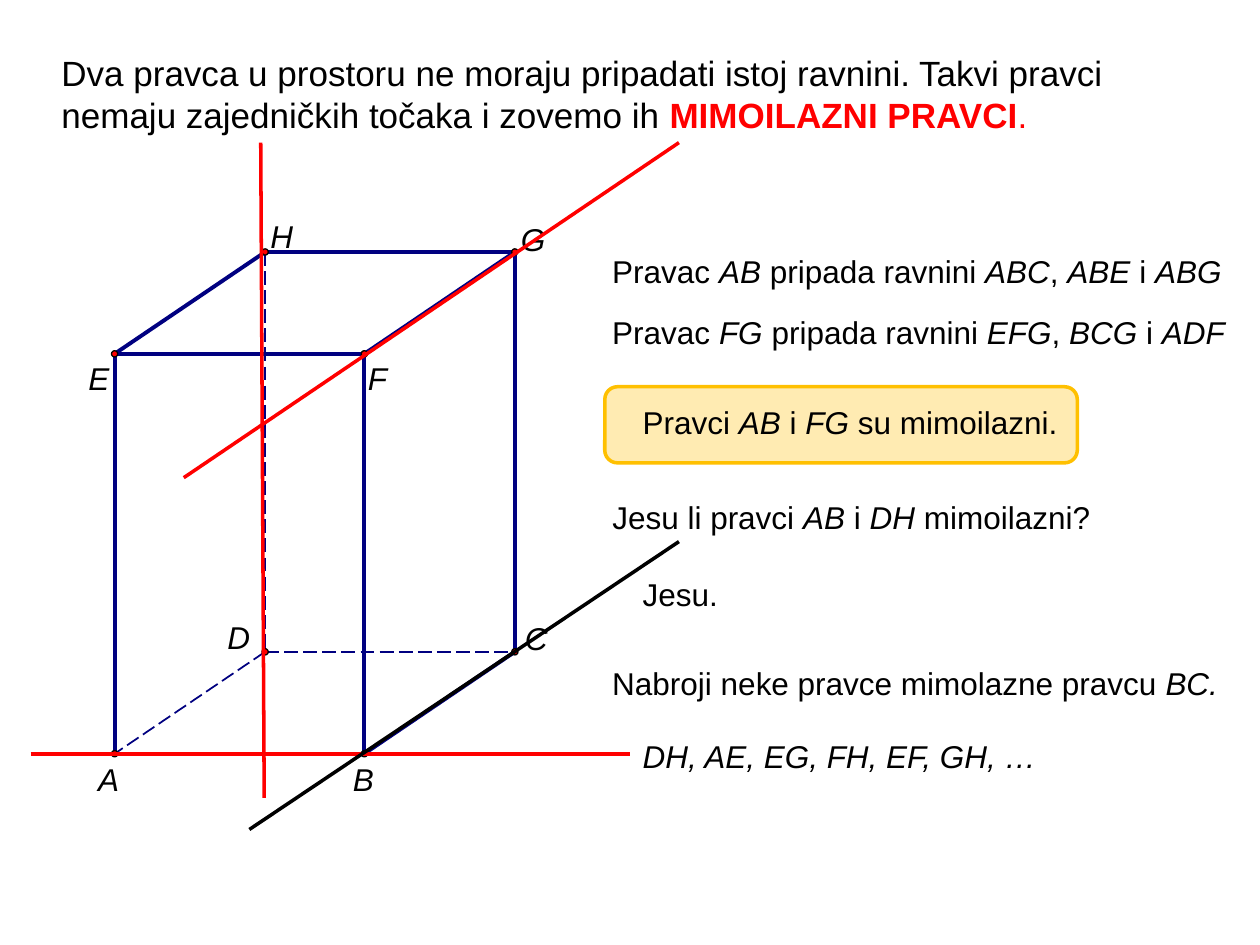
from pptx import Presentation
from pptx.dml.color import RGBColor
from pptx.enum.dml import MSO_LINE
from pptx.enum.shapes import MSO_CONNECTOR as LINK, MSO_SHAPE as SHAPE
from pptx.enum.text import MSO_AUTO_SIZE as FIT
from pptx.oxml.ns import qn
from pptx.util import Pt
from lxml.etree import SubElement

BLACK = RGBColor(0, 0, 0)
RED = RGBColor(255, 0, 0)
NAVY = RGBColor(0, 0, 128)
GOLD = RGBColor(255, 192, 0)

EDGES = ["AB", "AE", "EF", "FB", "CB", "GF", "GC", "HG", "HE"]
HIDDEN = ["DA", "DC", "HD"]
LABELS = {
    "A": (-9.5, 3.5), "B": (-6.5, 3.5), "C": (5.7, -18.7), "D": (-21.5, -19.3),
    "E": (-15, 3), "F": (2, 3), "G": (3.5, -18), "H": (3, -20),
}
LINES = [
    (17.5, 431, 360, 431, RED),
    (105, 273, 388, 81.5, RED),
    (149, 81.5, 151, 456, RED),
    (142.5, 474, 388, 309.5, BLACK),
]
NOTES = [
    (0, 0, 377, "Pravac |AB| pripada ravnini |ABC|, |ABE |i |ABG"),
    (0, 35, 377, "Pravac |FG| pripada ravnini |EFG|, |BCG| i |ADF"),
    (17.3, 86.5, 255, "Pravci |AB |i |FG| su mimoilazni."),
    (0, 140.5, 300, "Jesu li pravci |AB| i |DH| mimoilazni?"),
    (17.3, 184.5, 58, "Jesu."),
    (0, 235.5, 377, "Nabroji neke pravce mimolazne pravcu |BC."),
    (17.3, 277.3, 284, "|DH, AE, EG, FH, EF, GH, …"),
]


def add_line(shapes, start, end, color, width, dash=None):
    line = shapes.add_connector(LINK.STRAIGHT, *map(Pt, (*start, *end)))
    line.line.color.rgb = color
    line.line.width = Pt(width)
    if dash:
        line.line.dash_style = dash
    SubElement(line._element.spPr, qn("a:effectLst"))


def add_text(shapes, box, parts, size, wrap=True, inset=True):
    frame = shapes.add_textbox(*map(Pt, box)).text_frame
    frame.word_wrap = wrap
    frame.auto_size = FIT.SHAPE_TO_FIT_TEXT
    if not inset:
        frame.margin_left = frame.margin_right = 0
        frame.margin_top = frame.margin_bottom = 0
    runs = []
    for part in parts:
        run = frame.paragraphs[0].add_run()
        run.text = part
        run.font.name = "Arial"
        run.font.size = Pt(size)
        run.font.color.rgb = BLACK
        runs.append(run)
    return runs


def add_title(shapes, box):
    lead = ("Dva pravca u prostoru ne moraju pripadati istoj ravnini. "
            "Takvi pravci nemaju zajedničkih točaka i zovemo ih ")
    runs = add_text(shapes, box, [lead, "MIMOILAZNI PRAVCI", "."], 20)
    for run in runs[1:]:
        run.font.color.rgb = RED
    runs[1].font.bold = True


def add_prism(shapes, left, top, width, height, shift, rise):
    group = shapes.add_group_shape().shapes
    base = {
        "E": (left, top + rise), "F": (left + width, top + rise),
        "G": (left + width + shift, top), "H": (left + shift, top),
    }
    spots = dict(base)
    for low, high in zip("ABCD", "EFGH"):
        spots[low] = (base[high][0], base[high][1] + height)
    for a, b in EDGES:
        add_line(group, spots[a], spots[b], NAVY, 2.25)
    for a, b in HIDDEN:
        add_line(group, spots[a], spots[b], NAVY, 1, MSO_LINE.LONG_DASH)
    for name, (x, y) in spots.items():
        dot = group.add_shape(SHAPE.OVAL, Pt(x - 1.8), Pt(y - 1.8), Pt(3.6), Pt(3.6))
        dot.shadow.inherit = False
        dot.fill.solid()
        dot.fill.fore_color.rgb = RED
        dot.line.color.rgb = BLACK
        dot.line.width = Pt(0)
        dx, dy = LABELS[name]
        box = (x + dx, y + dy, 13, 21.6)
        run, = add_text(group, box, [name], 18, False, False)
        run.font.italic = True


def add_frame(shapes, box):
    frame = shapes.add_shape(SHAPE.ROUNDED_RECTANGLE, *map(Pt, box))
    frame.shadow.inherit = False
    frame.fill.solid()
    frame.fill.fore_color.rgb = GOLD
    tint = frame._element.spPr.find(qn("a:solidFill"))[0]
    SubElement(tint, qn("a:alpha")).set("val", "30000")
    frame.line.color.rgb = GOLD
    frame.line.width = Pt(2)


def add_notes(shapes, left, top):
    for dx, dy, width, text in NOTES:
        box = (left + dx, top + dy, width, 29)
        wrap = text != "Jesu."
        for i, run in enumerate(add_text(shapes, box, text.split("|"), 18, wrap)):
            run.font.italic = i % 2 == 1
            if not run.text:
                run._r.getparent().remove(run._r)


def main():
    deck = Presentation()
    deck.slide_width, deck.slide_height = Pt(720), Pt(540)
    shapes = deck.slides.add_slide(deck.slide_layouts[6]).shapes
    add_frame(shapes, (345.6, 221, 270, 43.5))
    add_title(shapes, (28, 26, 632, 55.5))
    add_prism(shapes, 65.5, 144, 142.7, 228.5, 86, 58.2)
    for x1, y1, x2, y2, color in LINES:
        add_line(shapes, (x1, y1), (x2, y2), color, 2)
    add_notes(shapes, 342.8, 140.5)
    deck.save("out.pptx")


if __name__ == "__main__":
    main()
